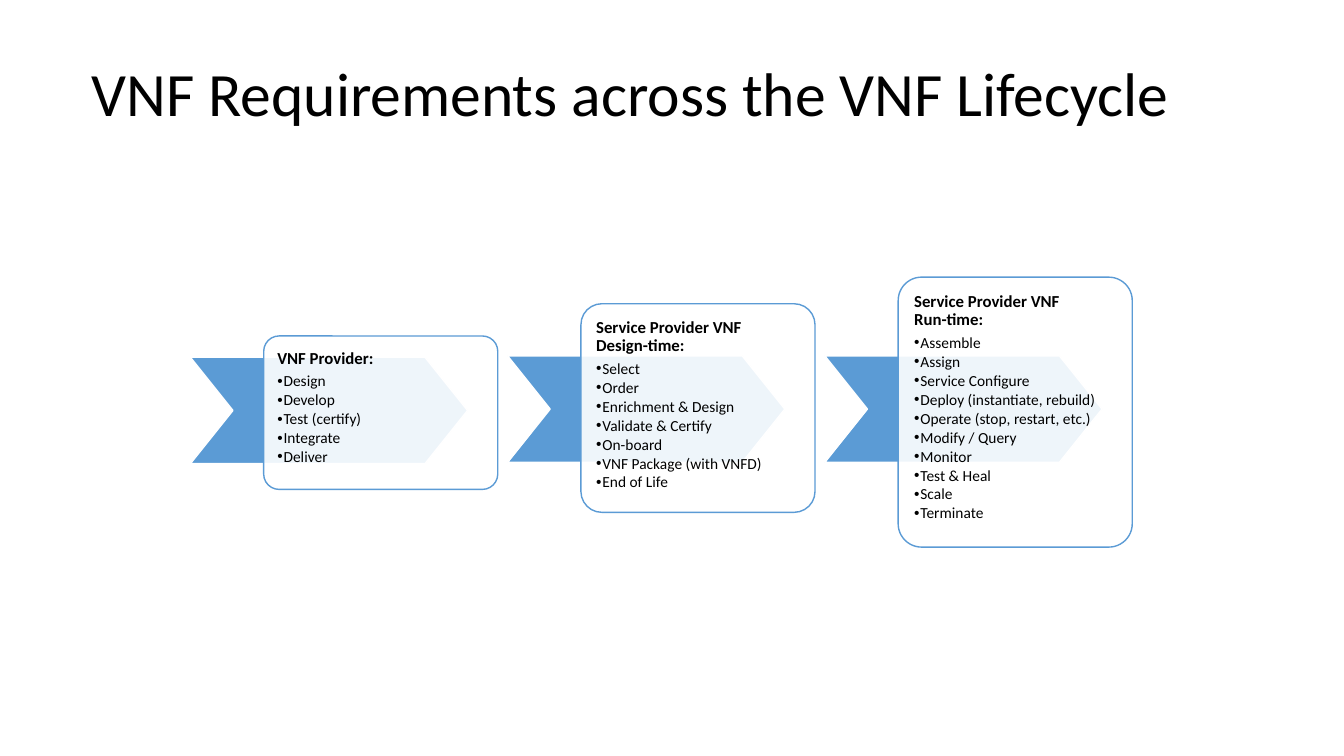
from lxml import etree
from pptx import Presentation
from pptx.dml.color import RGBColor
from pptx.enum.shapes import MSO_SHAPE
from pptx.enum.text import MSO_ANCHOR, PP_ALIGN
from pptx.oxml.ns import qn
from pptx.util import Pt

CHEVRON, ROUNDED = MSO_SHAPE.CHEVRON, MSO_SHAPE.ROUNDED_RECTANGLE
TOP, MIDDLE, LEFT = MSO_ANCHOR.TOP, MSO_ANCHOR.MIDDLE, PP_ALIGN.LEFT
BLUE, WHITE, BLACK = "5B9BD5", "FFFFFF", "000000"

# heading, chevron top, box top, box height, activities
STAGES = [
    ("VNF Provider:", 255.2, 240, 109.6,
     ["Design", "Develop", "Test (certify)", "Integrate", "Deliver"]),
    ("Service Provider VNF \vDesign-time:", 254.2, 217, 149,
     ["Select", "Order", "Enrichment & Design", "Validate & Certify",
      "On-board", "VNF Package (with VNFD)", "End of Life"]),
    ("Service Provider VNF \vRun-time:", 254.2, 198, 192.8,
     ["Assemble", "Assign", "Service Configure", "Deploy (instantiate, rebuild)",
      "Operate (stop, restart, etc.)", "Modify / Query", "Monitor",
      "Test & Heal", "Scale", "Terminate"]),
]
STAGE_PITCH = 226.6


def add_panel(kind, x, y, width, height, adjustment, fill, line):
    panel = slide.shapes.add_shape(kind, Pt(x), Pt(y), Pt(width), Pt(height))
    panel.adjustments[0] = adjustment
    panel.shadow.inherit = False
    panel.fill.solid()
    panel.fill.fore_color.rgb = RGBColor.from_string(fill)
    panel.line.color.rgb = RGBColor.from_string(line)
    panel.line.width = Pt(1)
    return panel


def style_paragraph(paragraph, size, bold=False, space_after=0):
    paragraph.alignment = LEFT
    paragraph.line_spacing = 0.9
    paragraph.space_after = Pt(space_after)
    for run in paragraph.runs:
        run.font.name = "Calibri"
        run.font.size = Pt(size)
        run.font.bold = bold
        run.font.color.rgb = RGBColor.from_string(BLACK)


prs = Presentation()
prs.slide_width, prs.slide_height = Pt(960), Pt(540)
slide = prs.slides.add_slide(prs.slide_layouts[6])

# Lifecycle stages
for index, (heading, chevron_top, top, height, activities) in enumerate(STAGES):
    offset = index * STAGE_PITCH
    add_panel(CHEVRON, 136 + offset, chevron_top, 198, 76, 0.4, BLUE, WHITE)
    box = add_panel(ROUNDED, 188.4 + offset, top, 167.2, height, 0.1, WHITE, BLUE)

    # Slightly see-through box, so the chevron shows behind the text
    box_color = box.fill._xPr.find(qn("a:solidFill"))[0]
    etree.SubElement(box_color, qn("a:alpha"), val="90000")

    frame = box.text_frame
    frame.word_wrap = True
    frame.vertical_anchor = TOP
    frame.margin_left = frame.margin_right = Pt(6.5)
    frame.margin_top = frame.margin_bottom = Pt(6.5)
    frame.paragraphs[0].text = heading
    style_paragraph(frame.paragraphs[0], 12, bold=True, space_after=4.2)

    # Bulleted activities
    for activity in activities:
        item = frame.add_paragraph()
        item.text = activity
        item.level = 1
        style_paragraph(item, 11, space_after=1.65)
        properties = item._p.get_or_add_pPr()
        properties.set("marL", str(Pt(4.5)))
        properties.set("indent", str(-Pt(4.5)))
        etree.SubElement(properties, qn("a:buFont"), typeface="Arial")
        etree.SubElement(properties, qn("a:buChar"), char="•")

# Title
title = slide.shapes.add_textbox(Pt(58.3), Pt(17), Pt(828), Pt(104.4))
title.text_frame.word_wrap = True
title.text_frame.vertical_anchor = MIDDLE
title.text_frame.text = "VNF Requirements across the VNF Lifecycle"
style_paragraph(title.text_frame.paragraphs[0], 44)

prs.save("out.pptx")
